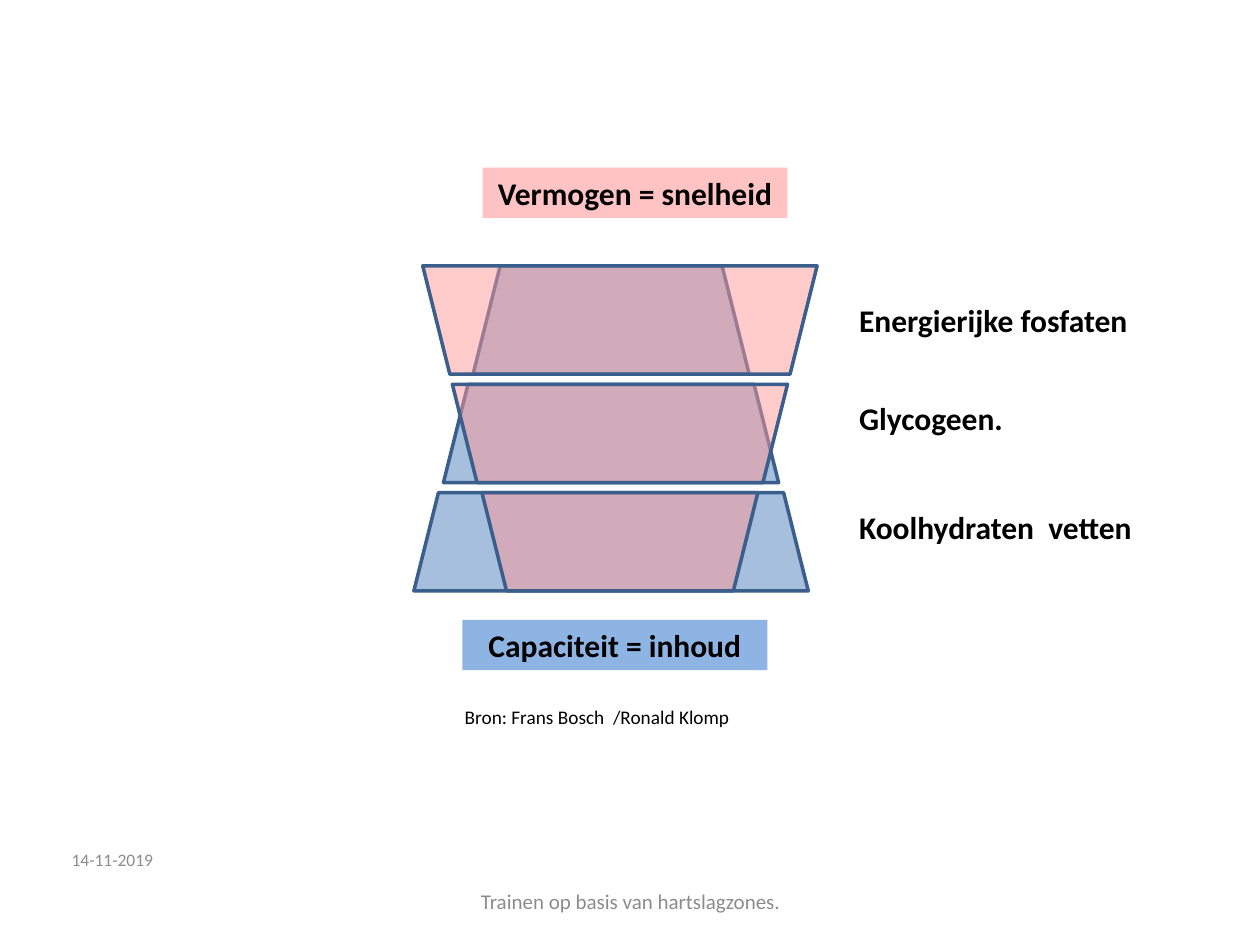
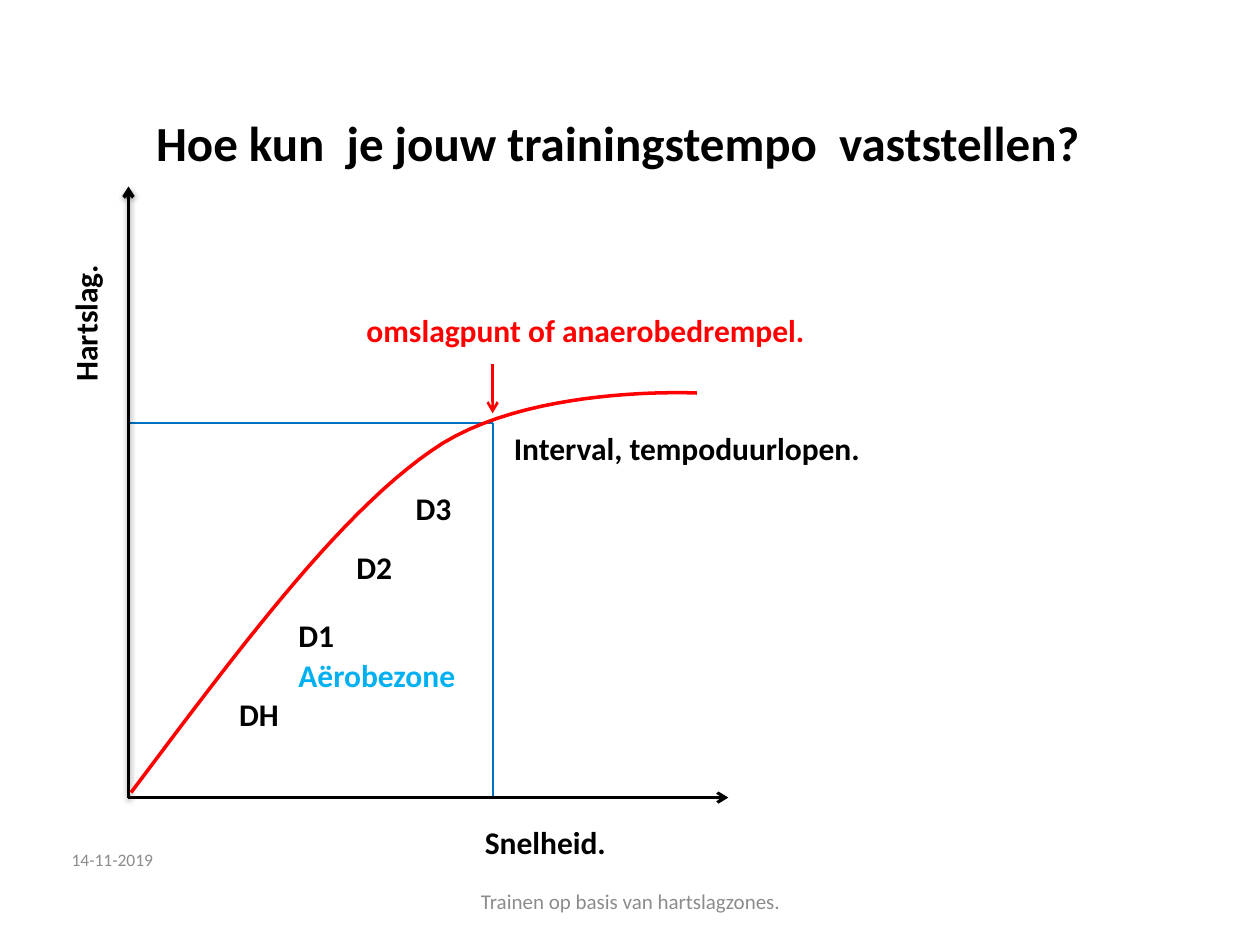
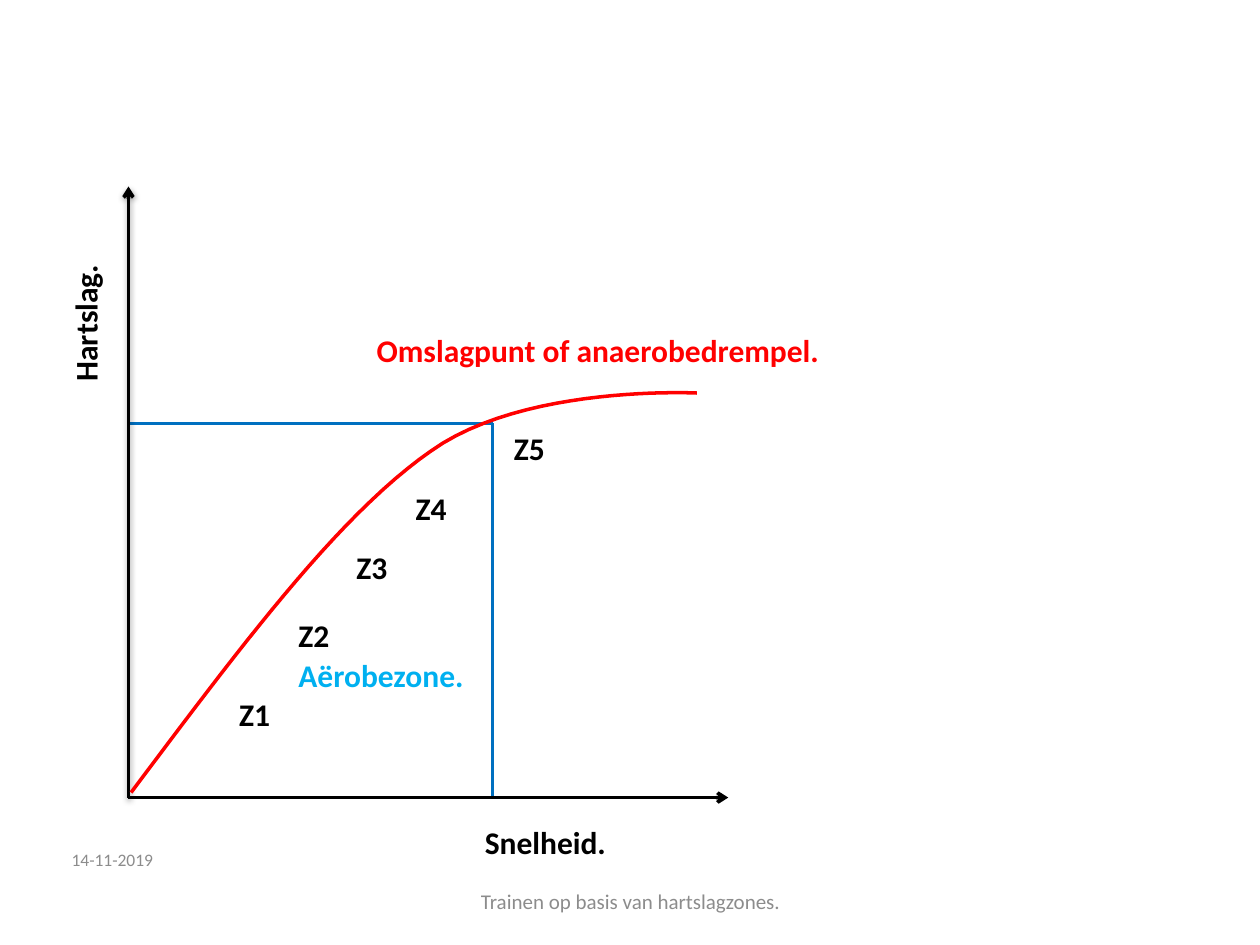
import pptx
import pptx.util
import pptx.dml.color
import pptx.enum.shapes
import pptx.enum.text
import pptx.oxml.ns
import lxml.etree

WIDE, HIGH = 10, 7.5
FONT = "Calibri"
BLACK, GREY, RED, SKY, BLUE = "000000", "8C8C8C", "FF0000", "00B0F0", "0070C0"
PINK, STEEL, EDGE, PALE = "FF9999", "4F81BD", "3A5F8C", "8EB4E3"
DATE, FOOT = "14-11-2019", "Trainen op basis van hartslagzones."

BANDS = [
    ("Vermogen = snelheid ", (3.83, 1.33, 2.42, 0.4), PINK, 58),
    ("Capaciteit = inhoud", (3.67, 4.92, 2.42, 0.4), PALE, 100),
]
FUELS = [("Energierijke fosfaten", 2.34), ("Glycogeen.", 3.12), ("Koolhydraten  vetten", 3.98)]
CREDIT = "Bron: Frans Bosch  /Ronald Klomp"
ROWS = [(2.11, 0.86), (3.05, 0.78), (3.91, 0.78)]
STACKS = [(4.85, STEEL, 0, (0, 1, 2)), (4.92, PINK, 180, (2, 1, 0))]
NARROW, STEP = 2.19, 0.47

LEFT, BASE, TOP, END = 1.02, 6.33, 1.48, 5.78
TURN = (3.91, 3.36)
CURVE = [
    [(1.04, 6.29), (1.86, 5.2), (2.67, 4.1), (3.42, 3.58)],
    [(3.42, 3.58), (4.16, 3.05), (5.53, 3.12), (5.53, 3.12)],
]
SPOTS = [(1.8, 5.47), (2.27, 4.84), (2.73, 4.3), (3.2, 3.83), (3.98, 3.36)]
GRAPHS = [
    dict(title="Hoe kun  je jouw trainingstempo  vaststellen?",
         zones=["DH", "D1", "D2", "D3", "Interval, tempoduurlopen."],
         wide=[0.63] * 4 + [3.36], aero="Aërobezone", guide=1.25, axis=1.75,
         bend=("omslagpunt of anaerobedrempel.", 2.81, 2.42), arrow=True),
    dict(title=None, zones=["Z1", "Z2", "Z3", "Z4", "Z5"],
         wide=[0.47] * 5, aero="Aërobezone.", guide=2, axis=2,
         bend=("Omslagpunt of anaerobedrempel.", 2.89, 2.58), arrow=False),
]

inch = pptx.util.Inches
kinds = pptx.enum.shapes.MSO_SHAPE
qn = pptx.oxml.ns.qn


def tint(code):
    return pptx.dml.color.RGBColor.from_string(code)


def child(node, tag, **attrs):
    return lxml.etree.SubElement(node, qn(tag), {k: str(v) for k, v in attrs.items()})


def paint(shape, code, alpha=100):
    shape.fill.solid()
    shape.fill.fore_color.rgb = tint(code)
    if alpha < 100:
        node = shape._element.spPr.find(qn("a:solidFill"))
        child(node[0], "a:alpha", val=alpha * 1000)


def stroke(shape, code, width):
    shape.line.color.rgb = tint(code)
    shape.line.width = pptx.util.Pt(width)


def text(slide, words, at, size=18, bold=True, color=BLACK, center=False,
         middle=False, turn=0, fill=None, alpha=100):
    box = slide.shapes.add_textbox(*map(inch, at))
    box.rotation = turn
    if fill:
        paint(box, fill, alpha)
    frame = box.text_frame
    frame.word_wrap = True
    if middle:
        frame.vertical_anchor = pptx.enum.text.MSO_ANCHOR.MIDDLE
    para = frame.paragraphs[0]
    if center:
        para.alignment = pptx.enum.text.PP_ALIGN.CENTER
    run = para.add_run()
    run.text = words
    run.font.name = FONT
    run.font.size = pptx.util.Pt(size)
    run.font.bold = bold
    run.font.color.rgb = tint(color)


def line(slide, start, end, color, width, head=False, shade=False):
    link = slide.shapes.add_connector(
        pptx.enum.shapes.MSO_CONNECTOR.STRAIGHT, *map(inch, start + end))
    stroke(link, color, width)
    props = link._element.spPr
    if head:
        child(props.find(qn("a:ln")), "a:tailEnd", type="arrow")
    glow = child(props, "a:effectLst")
    if shade:
        drop = child(glow, "a:outerShdw", blurRad=pptx.util.Pt(3.1),
                     dist=pptx.util.Pt(1.6), dir=90 * 60000, rotWithShape=0)
        child(child(drop, "a:srgbClr", val=BLACK), "a:alpha", val=38000)


def curve(slide, parts, steps=24):
    dots = []
    for part in parts:
        for i in range(steps + 1):
            t = i / steps
            mix = ((1 - t) ** 3, 3 * t * (1 - t) ** 2, 3 * t * t * (1 - t), t ** 3)
            dots.append(tuple(inch(sum(m * p[k] for m, p in zip(mix, part)))
                              for k in (0, 1)))
    pen = slide.shapes.build_freeform(*dots[0])
    pen.add_line_segments(dots[1:], close=False)
    shape = pen.convert_to_shape()
    shape.shadow.inherit = False
    shape.fill.background()
    stroke(shape, RED, 2)


def page(deck):
    slide = deck.slides.add_slide(deck.slide_layouts[6])
    text(slide, DATE, (0.47, 6.56, 2.33, 0.52), size=10, bold=False, color=GREY, middle=True)
    text(slide, FOOT, (3.42, 6.95, 3.17, 0.4), size=12, bold=False, color=GREY,
         center=True, middle=True)
    return slide


def energy(deck):
    slide = page(deck)
    for words, at, fill, alpha in BANDS:
        text(slide, words, at, center=True, fill=fill, alpha=alpha)
    for words, top in FUELS:
        text(slide, words, (6.72, top, 2.5, 0.4))
    text(slide, CREDIT, (3.59, 5.55, 2.66, 0.29), size=11, bold=False)
    for mid, fill, turn, ranks in STACKS:
        for (top, tall), rank in zip(ROWS, ranks):
            wide = NARROW + STEP * rank
            part = slide.shapes.add_shape(
                kinds.TRAPEZOID, *map(inch, (mid - wide / 2, top, wide, tall)))
            part.rotation = turn
            part.shadow.inherit = False
            paint(part, fill, 50)
            stroke(part, EDGE, 2)


def graph(deck, title, zones, wide, aero, guide, axis, bend, arrow):
    slide = page(deck)
    x, y = TURN
    line(slide, TURN, (LEFT, y), BLUE, guide)
    line(slide, (x, BASE), TURN, BLUE, guide)
    line(slide, (LEFT, BASE), (END, BASE), BLACK, axis, head=True)
    line(slide, (LEFT, BASE), (LEFT, TOP), BLACK, 2, head=True, shade=True)
    curve(slide, CURVE)
    text(slide, "Snelheid.", (3.75, 6.48, 2.03, 0.4))
    text(slide, "Hartslag.", (0.05, 2.3, 1.25, 0.4), turn=270)
    text(slide, aero, (2.27, 5.16, 1.61, 0.4), color=SKY)
    words, left, top = bend
    text(slide, words, (left, top, 4.22, 0.4), color=RED)
    for name, spot, span in zip(zones, SPOTS, wide):
        text(slide, name, spot + (span, 0.4))
    if title:
        text(slide, title, (1.14, 0.84, 8.05, 0.57), size=28)
    if arrow:
        line(slide, (x, 2.89), (x, 3.28), RED, 1.5, head=True)


def main():
    deck = pptx.Presentation()
    deck.slide_width, deck.slide_height = inch(WIDE), inch(HIGH)
    energy(deck)
    for plot in GRAPHS:
        graph(deck, **plot)
    deck.save("out.pptx")


if __name__ == "__main__":
    main()
